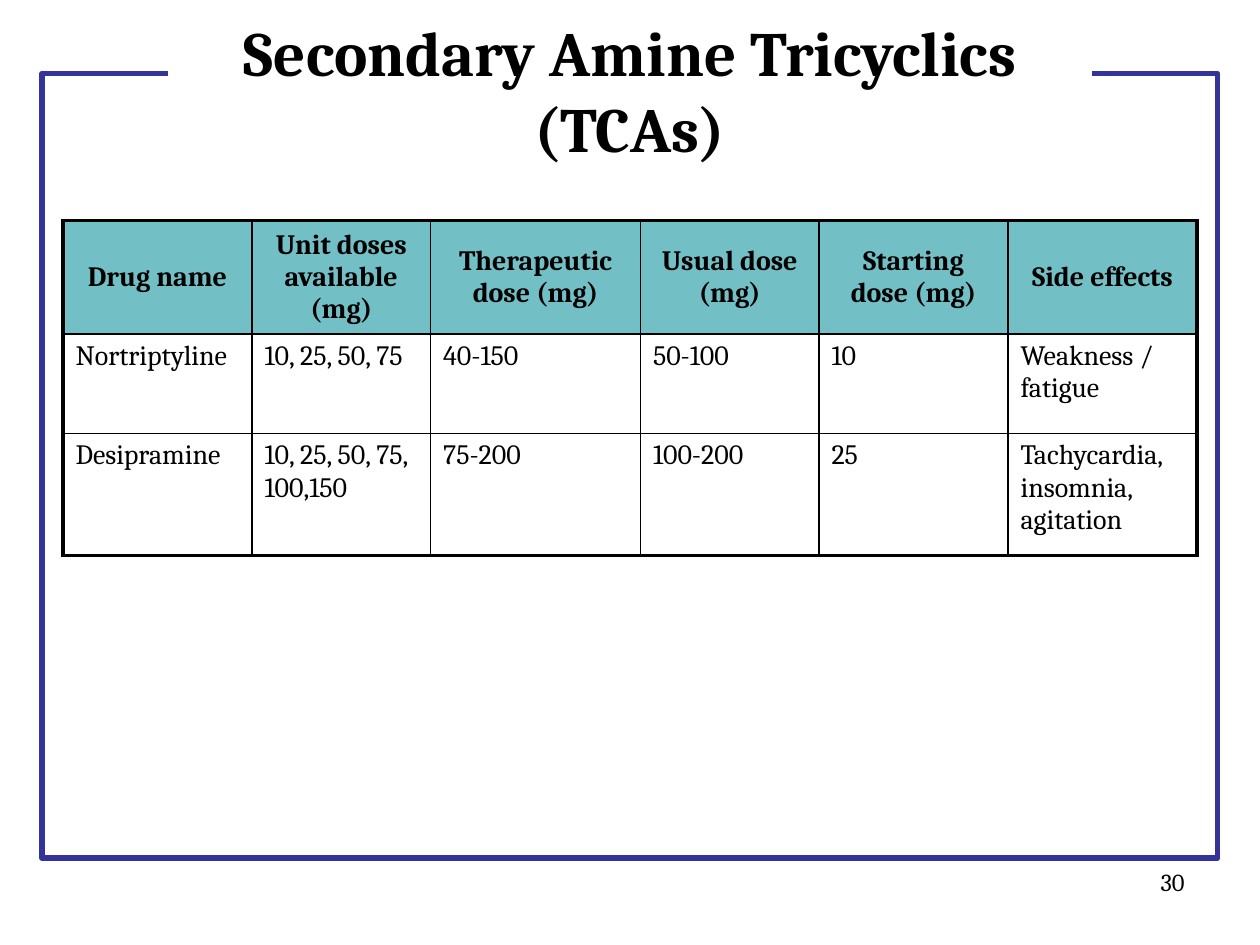
from lxml.etree import SubElement
from pptx import Presentation
from pptx.dml.color import RGBColor
from pptx.enum.shapes import MSO_SHAPE as Shape
from pptx.enum.text import MSO_ANCHOR as Anchor, MSO_AUTO_SIZE as AutoSize, PP_ALIGN as Align
from pptx.oxml.ns import qn
from pptx.util import Cm, Pt

TITLE = "Secondary Amine Tricyclics\v(TCAs)"
PAGE_NUMBER = "30"
DRUGS = [
    ("Drug name", "Unit doses available (mg)", "Therapeutic dose (mg)",
     "Usual dose (mg)", "Starting dose (mg)", "Side effects"),
    ("Nortriptyline", "10, 25, 50, 75", "40-150", "50-100", "10", "Weakness / fatigue"),
    ("Desipramine", "10, 25, 50, 75, 100,150", "75-200", "100-200", "25",
     "Tachycardia, insomnia, agitation"),
]
COLUMN_WIDTHS = [3.81, 3.6, 4.23, 3.6, 3.81, 3.81]
ROW_HEIGHTS = [2.12, 2, 2.46]
BLACK, WHITE, TEAL, BLUE = "000000", "FFFFFF", "72BFC5", "333399"
THIN, THICK = 1, 2.25

TITLE_FORMAT = {"name": "Cambria", "size": Pt(36), "bold": True}
HEADER_FORMAT = {"name": "Cambria", "size": Pt(16), "bold": True}
BODY_FORMAT = {"name": "Cambria", "size": Pt(16), "bold": False}
NUMBER_FORMAT = {"name": "Cambria", "size": Pt(14), "bold": False}


def colour(target, value):
    """Give a fill or font colour from a hex string."""
    target.rgb = RGBColor.from_string(value)


def paint(fill, value):
    """Make a fill solid in one colour."""
    fill.solid()
    colour(fill.fore_color, value)


def write(frame, text, style, align, anchor):
    """Put formatted black text into a text frame."""
    frame.text = text
    frame.word_wrap = True
    frame.vertical_anchor = anchor
    for para in frame.paragraphs:
        para.alignment = align
        for span in para.runs:
            for name, value in style.items():
                setattr(span.font, name, value)
            colour(span.font.color, BLACK)


def add_borders(cell, widths):
    """Draw the left, right, top and bottom borders of a cell."""
    properties = cell._tc.get_or_add_tcPr()
    for side, width in zip("LRTB", widths):
        line = SubElement(properties, qn(f"a:ln{side}"), w=str(Pt(width)))
        SubElement(SubElement(line, qn("a:solidFill")), qn("a:srgbClr"), val=BLACK)


def add_drug_table(page):
    """Add the dose table with a thick outer edge."""
    last_row, last_column = len(DRUGS) - 1, len(COLUMN_WIDTHS) - 1
    table = page.shapes.add_table(
        len(DRUGS), len(COLUMN_WIDTHS), Cm(1.27), Cm(4.45),
        Cm(sum(COLUMN_WIDTHS)), Cm(sum(ROW_HEIGHTS))).table
    table.first_row = table.horz_banding = False
    for column, width in zip(table.columns, COLUMN_WIDTHS):
        column.width = Cm(width)
    for r, (row, height, texts) in enumerate(zip(table.rows, ROW_HEIGHTS, DRUGS)):
        row.height = Cm(height)
        for c, (cell, text) in enumerate(zip(row.cells, texts)):
            edges = (c == 0, c == last_column, r == 0, r == last_row)
            add_borders(cell, [THICK if edge else THIN for edge in edges])
            if r == 0:
                write(cell.text_frame, text, HEADER_FORMAT, Align.CENTER, None)
                cell.vertical_anchor = Anchor.MIDDLE
                paint(cell.fill, TEAL)
            else:
                write(cell.text_frame, text, BODY_FORMAT, Align.LEFT, None)
                cell.vertical_anchor = Anchor.TOP
                cell.fill.background()


def add_frame(page):
    """Add the blue outline around the content."""
    frame = page.shapes.add_shape(Shape.RECTANGLE, Cm(0.85), Cm(1.48), Cm(23.7), Cm(15.82))
    frame.shadow.inherit = False
    frame.fill.background()
    paint(frame.line.fill, BLUE)
    frame.line.width = Pt(3)


def set_title(page):
    """Place the title over the top edge of the frame."""
    title = page.shapes.title
    title.left, title.top, title.width, title.height = Cm(3.39), Cm(0.21), Cm(18.62), Cm(3.18)
    paint(title.fill, WHITE)
    write(title.text_frame, TITLE, TITLE_FORMAT, Align.CENTER, Anchor.MIDDLE)
    title.text_frame.auto_size = AutoSize.NONE
    title.element.getparent().append(title.element)


def main():
    """Build and save the slide."""
    deck = Presentation()
    deck.slide_width, deck.slide_height = Cm(25.4), Cm(19.05)
    page = deck.slides.add_slide(deck.slide_layouts[5])
    paint(page.background.fill, WHITE)
    number = page.shapes.add_textbox(Cm(18.2), Cm(17.35), Cm(5.93), Cm(1.32))
    write(number.text_frame, PAGE_NUMBER, NUMBER_FORMAT, Align.RIGHT, Anchor.TOP)
    add_drug_table(page)
    add_frame(page)
    set_title(page)
    deck.save("out.pptx")


if __name__ == "__main__":
    main()
